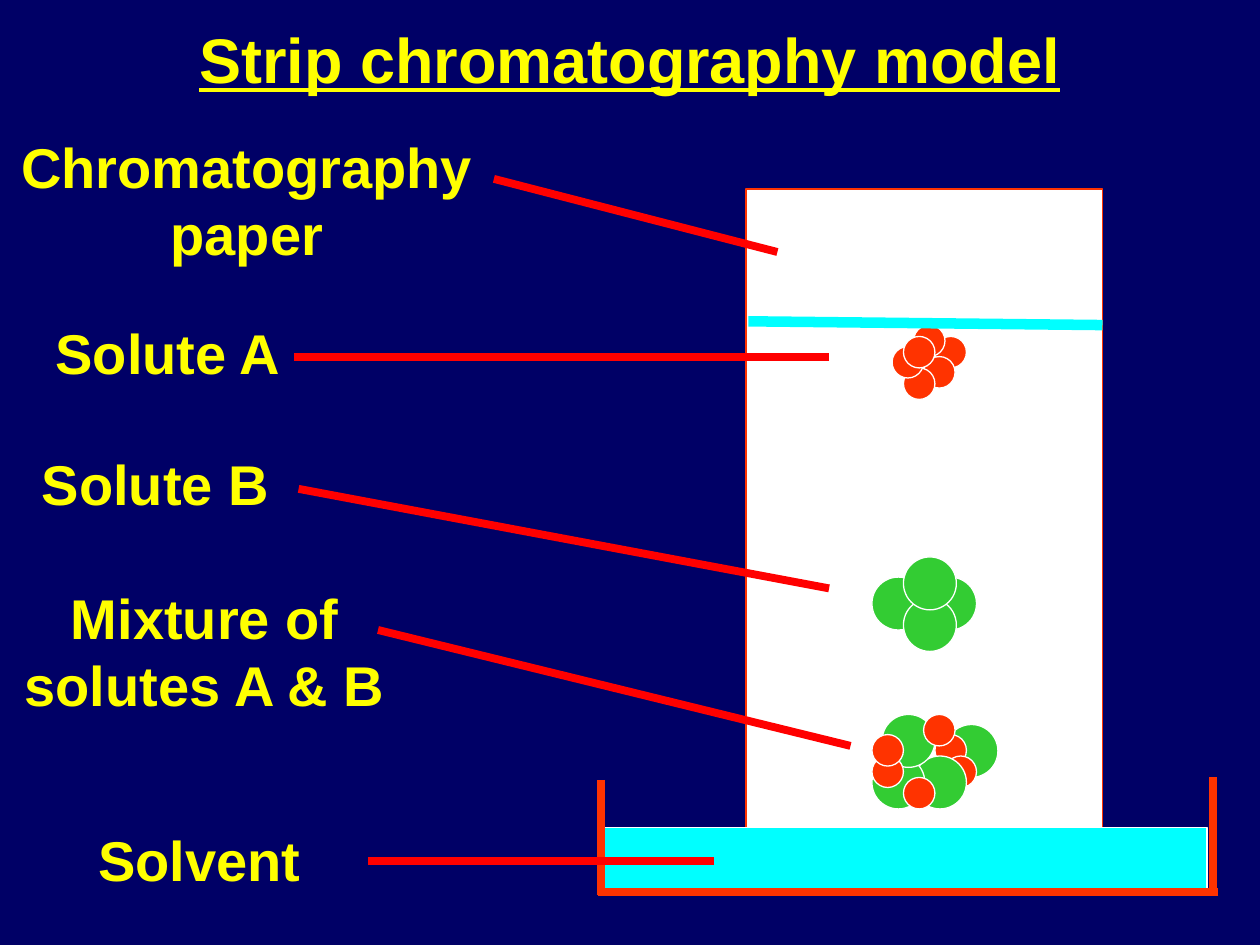
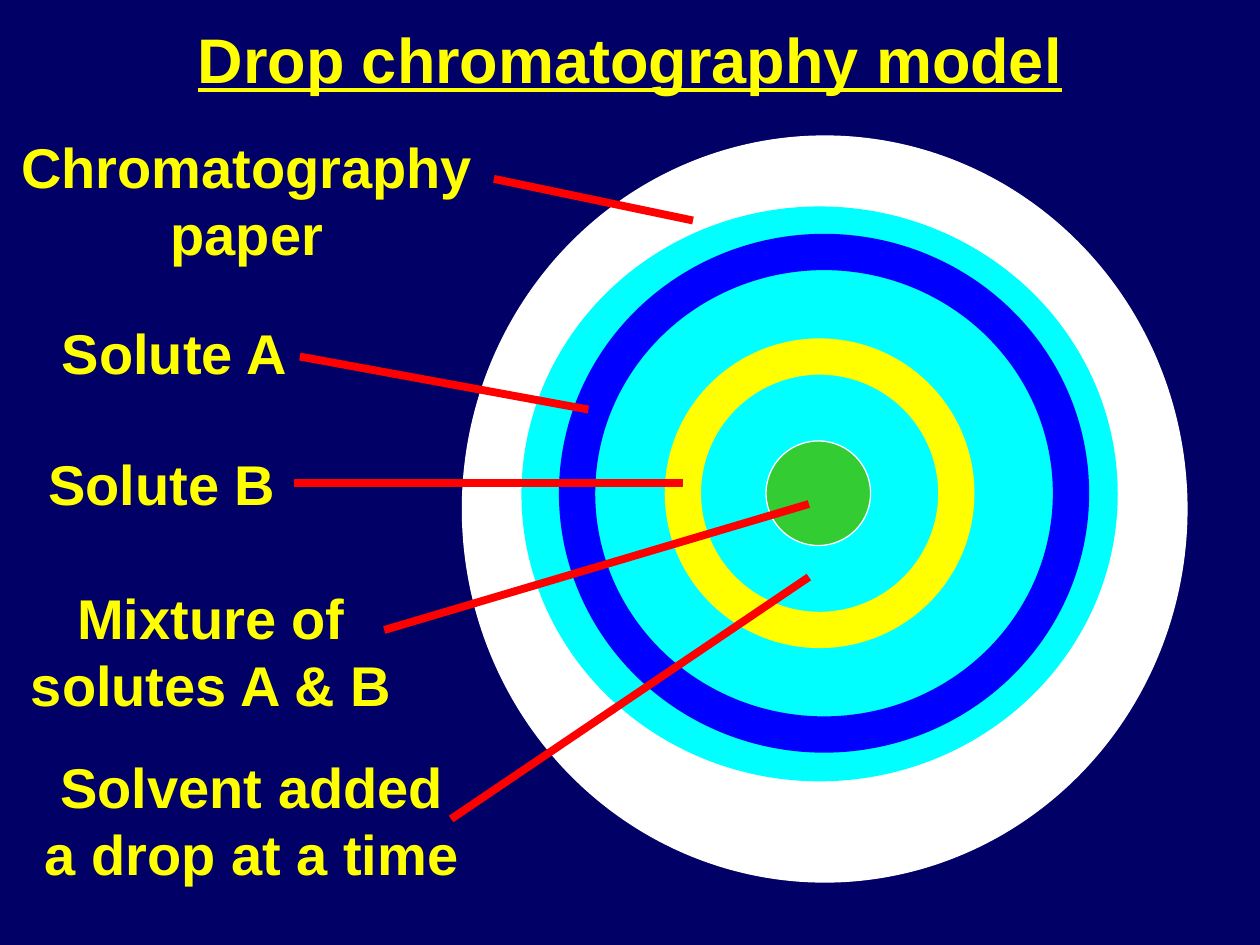
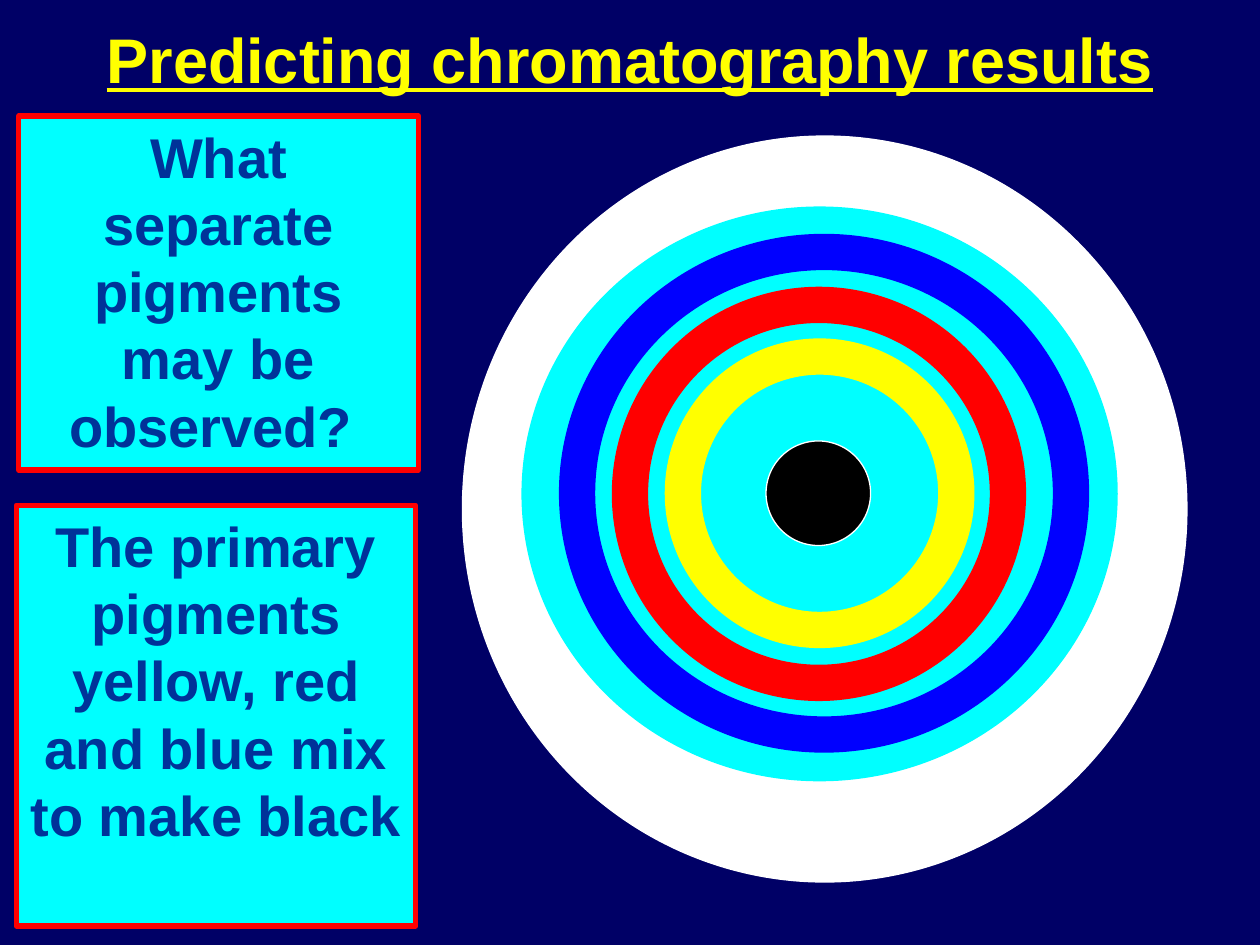
"""Builds three slides on strip and drop chromatography."""
from pptx import Presentation
from pptx.dml.color import RGBColor
from pptx.enum import shapes, text
from pptx.oxml import xmlchemy
from pptx.util import Inches, Pt

NAVY, INK, YELLOW, CYAN, WHITE = "000066", "003399", "FFFF00", "00FFFF", "FFFFFF"
RED, ORANGE, GREEN, BLUE, BLACK = "FF0000", "FF3300", "33CC33", "0000FF", "000000"
RECTANGLE, OVAL = shapes.MSO_SHAPE.RECTANGLE, shapes.MSO_SHAPE.OVAL

STRIP_TITLE = "Strip chromatography model"
DROP_TITLE = "Drop chromatography model"
PREDICTING_TITLE = "Predicting chromatography results"

ONE_LINE, TWO_LINES = 0.63, 1.17
STRIP_LABELS = [
    ("Chromatography paper", (0, 1, 3.92, TWO_LINES)),
    ("Solute A", (0, 2.48, 2.67, ONE_LINE)),
    ("Solute B", (-0.05, 3.52, 2.57, ONE_LINE)),
    ("Mixture of solutes A & B", (0, 4.58, 3.25, TWO_LINES)),
    ("Solvent", (0.42, 6.5, 2.33, ONE_LINE)),
]
STRIP_POINTERS = [
    (6.17, 2, 3.92, 1.42), (6.58, 2.83, 2.33, 2.83), (6.58, 4.67, 2.37, 3.88),
    (6.75, 5.92, 3, 5), (5.67, 6.83, 2.92, 6.83),
]
DROP_LABELS = [
    ("Chromatography paper", (0, 1, 3.92, TWO_LINES)),
    ("Solute A", (0.05, 2.48, 2.67, ONE_LINE)),
    ("Solute B", (0, 3.52, 2.57, ONE_LINE)),
    ("Mixture of solutes A & B", (0.05, 4.58, 3.25, TWO_LINES)),
    ("Solvent added a drop at a time", (0.25, 5.92, 3.5, TWO_LINES)),
]
DROP_POINTERS = [
    (5.5, 1.75, 3.92, 1.42), (4.67, 3.25, 2.38, 2.83), (5.42, 3.83, 2.33, 3.83),
    (6.42, 4, 3.05, 5), (6.42, 4.58, 3.58, 6.5),
]
QUESTION_PANELS = [
    ("What separate pigments may be observed? ", (0.15, 0.92, 3.17, 2.81)),
    ("The primary pigments yellow, red and blue mix to make black", (0.13, 4.01, 3.17, 3.34)),
]

PARTICLE_SIZES = {ORANGE: 0.25, GREEN: 0.42}
MIXTURE = [
    (GREEN, 7.5, 5.75), (ORANGE, 7.42, 5.83), (ORANGE, 7.5, 6), (GREEN, 7.25, 6),
    (GREEN, 6.92, 6), (GREEN, 7, 5.67), (ORANGE, 7.17, 6.17), (ORANGE, 6.92, 6),
    (ORANGE, 6.92, 5.83), (ORANGE, 7.33, 5.67),
]
SOLUTE_B = [(GREEN, 7.33, 4.58), (GREEN, 6.92, 4.58), (GREEN, 7.17, 4.75), (GREEN, 7.17, 4.42)]
SOLUTE_A = [
    (ORANGE, 7.42, 2.67), (ORANGE, 7.33, 2.83), (ORANGE, 7.17, 2.92),
    (ORANGE, 7.08, 2.75), (ORANGE, 7.25, 2.58), (ORANGE, 7.17, 2.67),
]
BEAKER = [(9.63, 6.17, 9.63, 7.08), (4.77, 6.19, 4.77, 7.1), (9.67, 7.08, 4.75, 7.08)]
SOLVENT_FRONT = (5.94, 2.55, 8.75, 2.58)

RINGS = {
    YELLOW: (5.42, 2.83, 2.17, 2.17),
    RED: (5, 2.42, 3, 3),
    BLUE: (4.58, 2, 3.92, 3.83),
}


def color(value):
    return RGBColor.from_string(value)


def write(shape, words, size=32, ink=YELLOW, underline=None):
    frame = shape.text_frame
    frame.word_wrap = True
    paragraph = frame.paragraphs[0]
    paragraph.alignment = text.PP_ALIGN.CENTER
    run = paragraph.add_run()
    run.text = words
    font_format = {"name": "Arial", "size": Pt(size), "bold": True, "underline": underline}
    for name, value in font_format.items():
        setattr(run.font, name, value)
    run.font.color.rgb = color(ink)


def add_figure(slide, kind, box, fill, line=WHITE, width=0.75):
    shape = slide.shapes.add_shape(kind, *map(Inches, box))
    shape.shadow.inherit = False
    if fill:
        shape.fill.solid()
        shape.fill.fore_color.rgb = color(fill)
    else:
        shape.fill.background()
    shape.line.color.rgb = color(line)
    shape.line.width = Pt(width)
    return shape


def add_lines(slide, lines, line_color=RED, width=4.5):
    for ends in lines:
        connector = slide.shapes.add_connector(
            shapes.MSO_CONNECTOR.STRAIGHT, *map(Inches, ends))
        connector.line.color.rgb = color(line_color)
        connector.line.width = Pt(width)
        properties = connector._element.spPr
        properties.append(xmlchemy.OxmlElement("a:effectLst"))


def add_labels(slide, labels):
    for words, box in labels:
        write(slide.shapes.add_textbox(*map(Inches, box)), words)


def add_particles(slide, particles):
    for fill, left, top in particles:
        size = PARTICLE_SIZES[fill]
        add_figure(slide, OVAL, (left, top, size, size), fill)


def add_drop_paper(slide, ring_colors, spot_color):
    add_figure(slide, OVAL, (3.67, 1.08, 5.75, 5.92), WHITE)
    add_figure(slide, OVAL, (4.17, 1.67, 4.67, 4.5), CYAN, CYAN, 4.5)
    for ring_color in ring_colors:
        add_figure(slide, OVAL, RINGS[ring_color], None, ring_color, 20.75)
    add_figure(slide, OVAL, (6.08, 3.5, 0.83, 0.83), spot_color)


def add_titled_slide(presentation, title):
    slide = presentation.slides.add_slide(presentation.slide_layouts[5])
    shape = slide.shapes.title
    shape.left, shape.top, shape.width, shape.height = map(Inches, (0, 0, 10, 0.92))
    shape.text_frame.vertical_anchor = text.MSO_ANCHOR.MIDDLE
    write(shape, title, 36, underline=True)
    return slide


def build_strip(presentation):
    slide = add_titled_slide(presentation, STRIP_TITLE)
    add_figure(slide, RECTANGLE, (5.92, 1.5, 2.83, 5.42), WHITE, ORANGE)
    add_figure(slide, RECTANGLE, (4.79, 6.57, 4.79, 0.49), CYAN)
    add_lines(slide, BEAKER, ORANGE)
    add_particles(slide, MIXTURE + SOLUTE_B + SOLUTE_A)
    add_lines(slide, [SOLVENT_FRONT], CYAN, 6)
    add_labels(slide, STRIP_LABELS)
    add_lines(slide, STRIP_POINTERS)


def build_drop(presentation):
    slide = add_titled_slide(presentation, DROP_TITLE)
    add_drop_paper(slide, [YELLOW, BLUE], GREEN)
    add_labels(slide, DROP_LABELS)
    add_lines(slide, DROP_POINTERS)


def build_predicting(presentation):
    slide = add_titled_slide(presentation, PREDICTING_TITLE)
    add_drop_paper(slide, [YELLOW, RED, BLUE], BLACK)
    for words, box in QUESTION_PANELS:
        panel = add_figure(slide, RECTANGLE, box, CYAN, RED, 3)
        panel.text_frame.vertical_anchor = text.MSO_ANCHOR.TOP
        write(panel, words, ink=INK)


def main():
    presentation = Presentation()
    presentation.slide_width, presentation.slide_height = Inches(10), Inches(7.5)
    background = presentation.slide_master.background.fill
    background.solid()
    background.fore_color.rgb = color(NAVY)
    for build in (build_strip, build_drop, build_predicting):
        build(presentation)
    presentation.save("out.pptx")


if __name__ == "__main__":
    main()
